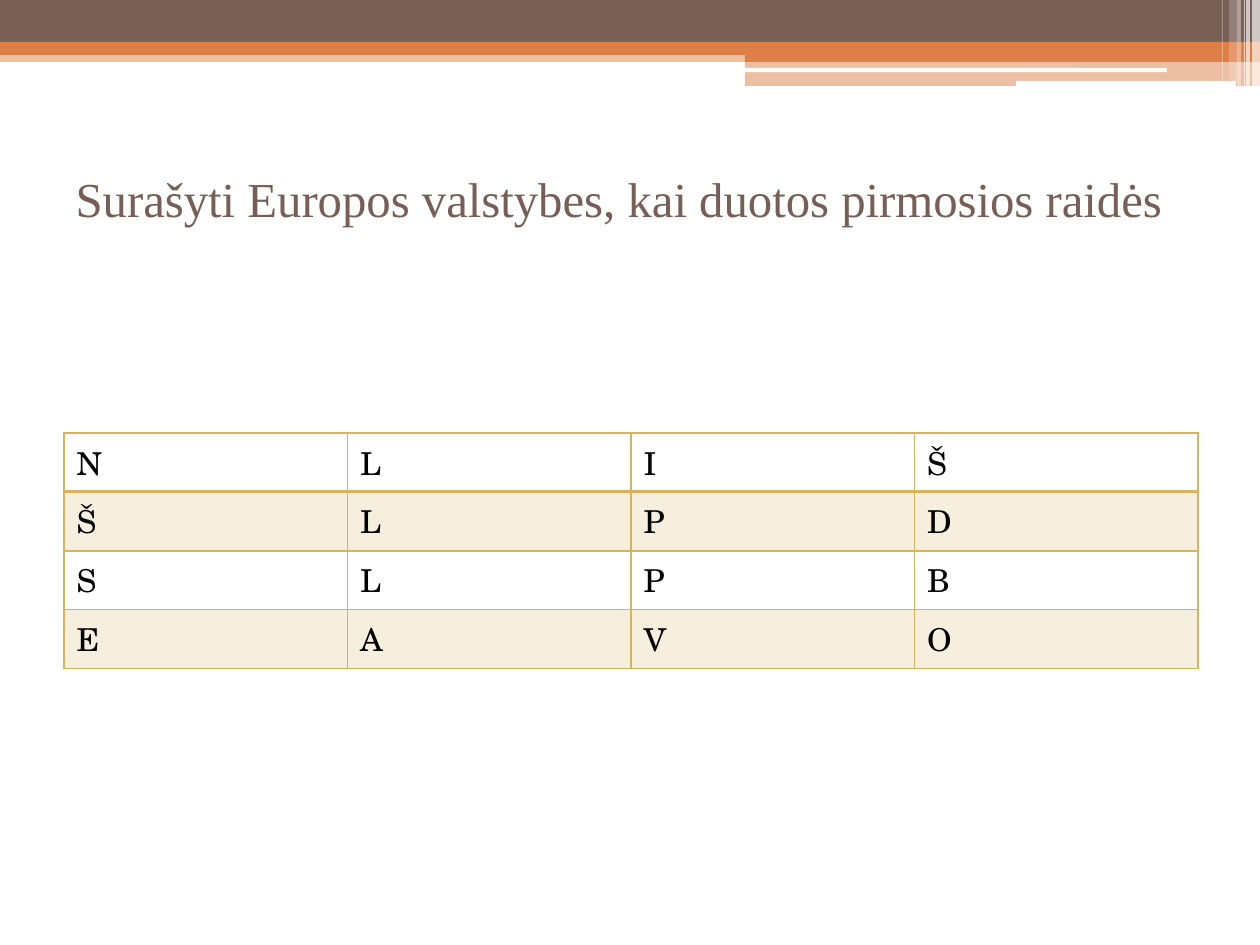
from lxml.etree import SubElement
from pptx import Presentation
from pptx.dml.color import RGBColor
from pptx.enum.shapes import MSO_SHAPE as Shape
from pptx.enum.text import MSO_ANCHOR as Anchor, PP_ALIGN as Align
from pptx.oxml import parse_xml
from pptx.oxml.ns import nsdecls, qn
from pptx.util import Emu, Pt

BROWN = RGBColor(0x77, 0x5F, 0x55)
ORANGE = RGBColor(0xDD, 0x80, 0x47)
GOLD = RGBColor(0xD8, 0xB2, 0x5C)
WHITE = RGBColor(0xFF, 0xFF, 0xFF)
BLACK = RGBColor(0x00, 0x00, 0x00)
TITLE_FONT = "Times New Roman"
TABLE_FONT = "TeX Gyre Schola"
SLIDE_WIDTH, SLIDE_HEIGHT = 1260, 945
TITLE = "Surašyti Europos valstybes, kai duotos pirmosios raidės"
LETTERS = ["NLIŠ", "ŠLPD", "SLPB", "EAVO"]
BANDS = [
    (Shape.RECTANGLE, 0, 50, 1260, 12, ORANGE, 50),
    (Shape.RECTANGLE, 0, 0, 1260, 42, BROWN, 100),
    (Shape.RECTANGLE, 0, 42, 1260, 13, ORANGE, 100),
    (Shape.RECTANGLE, 745, 49, 515, 13, ORANGE, 100),
    (Shape.RECTANGLE, 745, 61, 515, 25, ORANGE, 50),
    (Shape.ROUNDED_RECTANGLE, 745, 68, 422, 4, WHITE, 100),
    (Shape.ROUNDED_RECTANGLE, 1016, 81, 220, 5, WHITE, 100),
]
STRIPES = [
    (1252, 8, 86, 65),
    (1246, 4, 86, 65),
    (1244, 1, 86, 60),
    (1237, 4, 86, 40),
    (1229, 8, 81, 20),
    (1222, 1, 81, 30),
]


def px(length):
    """Turn pixels into EMU."""
    return Emu(round(length * 914400 / 126))


def set_opacity(element, percent):
    """Give the solid fill colour inside an element its opacity."""
    color = next(element.iter(qn("a:srgbClr")))
    SubElement(color, qn("a:alpha"), val=str(percent * 1000))


def add_block(slide, kind, left, top, width, height, color, opacity):
    """Add one borderless filled shape."""
    shape = slide.shapes.add_shape(kind, px(left), px(top), px(width), px(height))
    shape.shadow.inherit = False
    shape.line.fill.background()
    shape.fill.solid()
    shape.fill.fore_color.rgb = color
    if opacity < 100:
        set_opacity(shape.fill._xPr, opacity)


def add_header(slide, left, top):
    """Add the coloured bands and the pale stripes at their right end."""
    for kind, x, y, width, height, color, opacity in BANDS:
        add_block(slide, kind, left + x, top + y, width, height, color, opacity)
    for x, width, height, opacity in STRIPES:
        add_block(slide, Shape.RECTANGLE, left + x, top, width, height, WHITE, opacity)


def place_title(slide, left, top, width, height):
    """Move, fill and format the title placeholder."""
    title = slide.shapes.title
    title.left, title.top = px(left), px(top)
    title.width, title.height = px(width), px(height)
    frame = title.text_frame
    frame.text = TITLE
    frame.word_wrap = True
    frame.vertical_anchor = Anchor.MIDDLE
    frame.margin_bottom = px(73)
    paragraph = frame.paragraphs[0]
    paragraph.alignment = Align.LEFT
    font = paragraph.runs[0].font
    font.name, font.size = TITLE_FONT, Pt(27.9)
    font.color.rgb = BROWN


def set_borders(cell, top, bottom):
    """Draw gold cell borders with the given top and bottom widths in points."""
    properties = cell._tc.get_or_add_tcPr()
    widths = {"lnL": 1, "lnR": 1, "lnT": top, "lnB": bottom}
    for index, (tag, width) in enumerate(widths.items()):
        border = parse_xml(
            f'<a:{tag} {nsdecls("a")} w="{Pt(width)}"><a:solidFill>'
            f'<a:srgbClr val="{GOLD}"/></a:solidFill></a:{tag}>'
        )
        properties.insert(index, border)


def format_cell(cell, letter, row):
    """Write one letter and style its cell by row."""
    cell.text = letter
    font = cell.text_frame.paragraphs[0].runs[0].font
    font.name, font.size, font.bold = TABLE_FONT, Pt(18), False
    font.color.rgb = BLACK
    if row % 2:
        cell.fill.solid()
        cell.fill.fore_color.rgb = GOLD
        set_opacity(cell._tc.tcPr, 20)
    else:
        cell.fill.background()
    set_borders(cell, 2 if row == 1 else 1, 2 if row == 0 else 1)


def add_letter_table(slide, left, top, width, height):
    """Add the grid of first letters."""
    frame = slide.shapes.add_table(
        len(LETTERS), len(LETTERS[0]), px(left), px(top), px(width), px(height)
    )
    table = frame.table
    table.first_row = table.horz_banding = False
    for row, letters in enumerate(LETTERS):
        for column, letter in enumerate(letters):
            format_cell(table.cell(row, column), letter, row)


def main():
    """Build and save the slide."""
    presentation = Presentation()
    presentation.slide_width = px(SLIDE_WIDTH)
    presentation.slide_height = px(SLIDE_HEIGHT)
    slide = presentation.slides.add_slide(presentation.slide_layouts[5])
    add_header(slide, 0, 0)
    place_title(slide, 63, 158, 1134, 147)
    add_letter_table(slide, 64, 433, 1134, 204)
    presentation.save("out.pptx")


if __name__ == "__main__":
    main()
